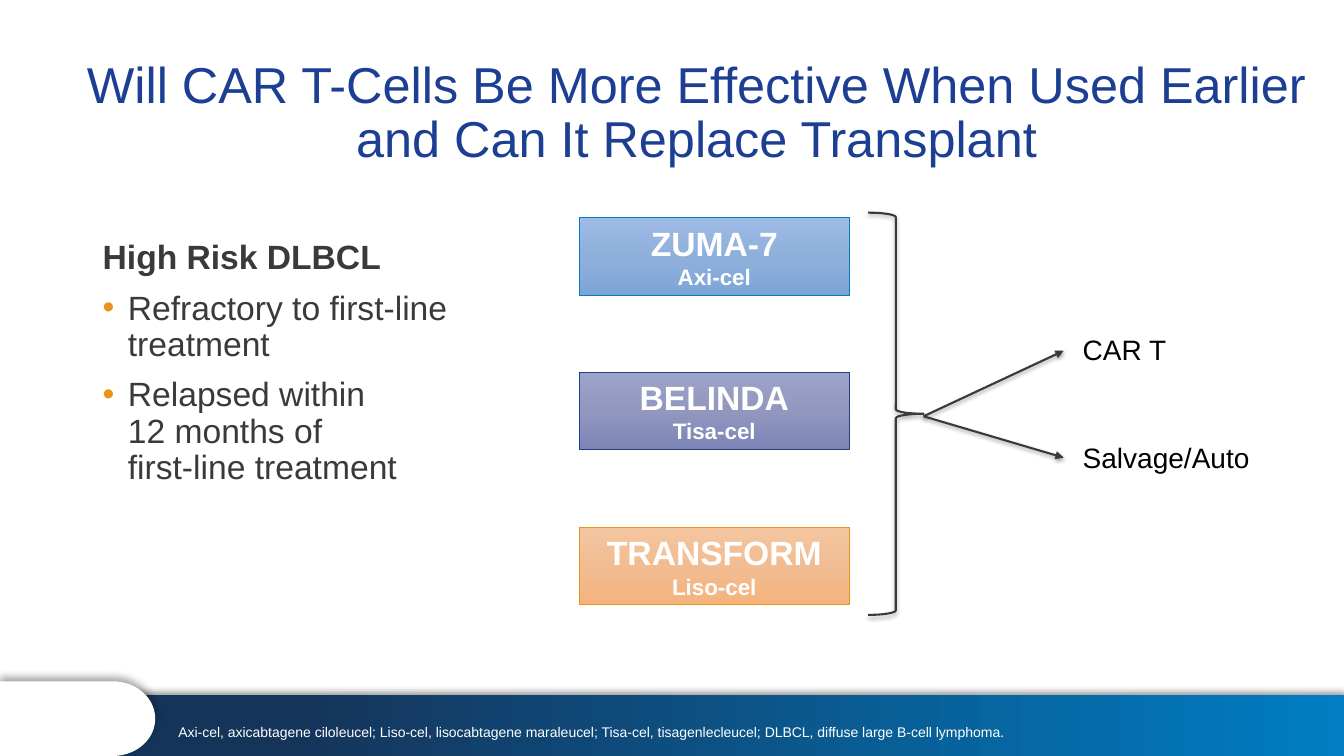
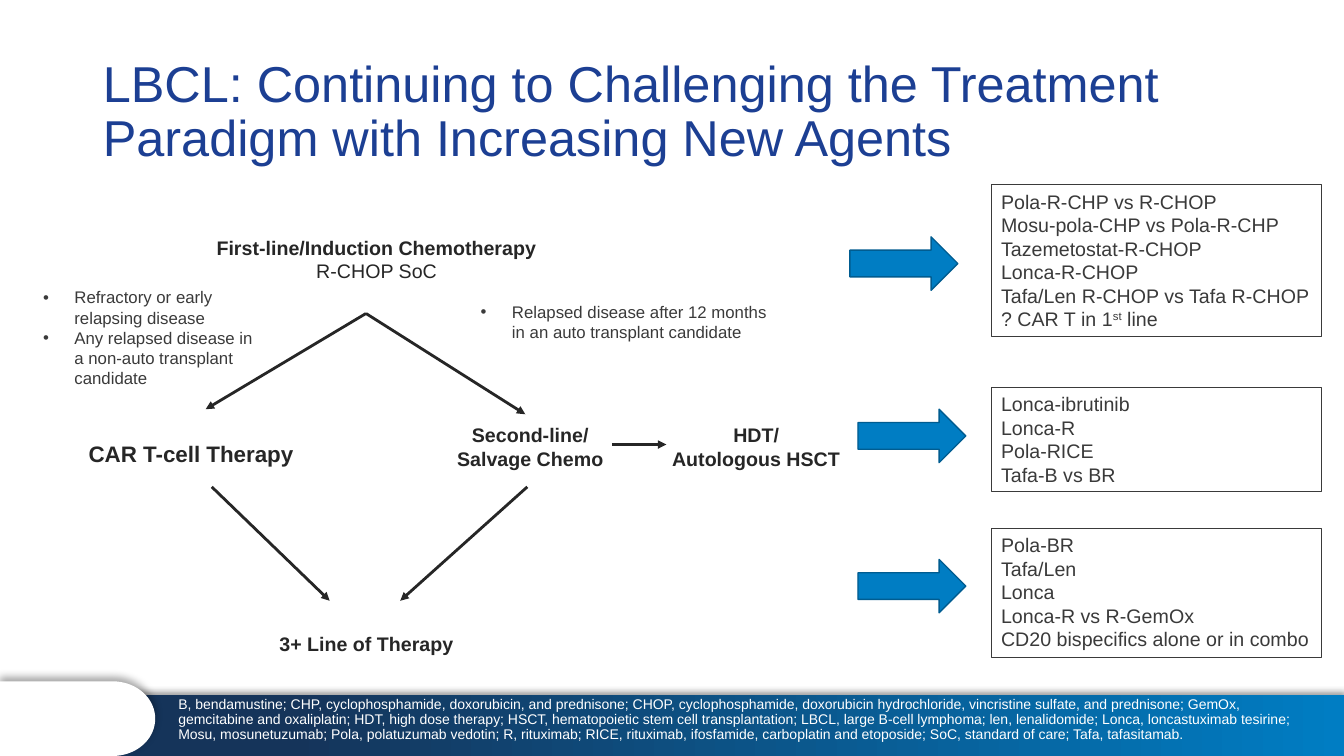
import dataclasses
import math

import lxml.etree
import pptx
import pptx.dml.color
import pptx.enum.dml
import pptx.enum.shapes
import pptx.enum.text
import pptx.oxml.ns
import pptx.util

SCALE = 9144
qn = pptx.oxml.ns.qn
KIND = pptx.enum.shapes.MSO_SHAPE
ALIGN = pptx.enum.text.PP_ALIGN
ANCHOR = pptx.enum.text.MSO_ANCHOR


@dataclasses.dataclass(frozen=True)
class Theme:
    font: str = "Arial"
    navy: str = "1C3F93"
    blue: str = "007DC3"
    edge: str = "005C90"
    deep: str = "15345A"
    gold: str = "E8931A"
    gray: str = "3A3A3A"
    dark: str = "262626"
    black: str = "000000"
    white: str = "FFFFFF"
    sky: tuple = ((0, "9DBBE5"), (50, "90B0DC"), (100, "7CA5D7"))
    plum: tuple = ((0, "9EA4C9"), (50, "9197BE"), (100, "7D85B7"))
    peach: tuple = ((0, "F4C6A0"), (50, "F1BC92"), (100, "F5B37D"))
    band: tuple = ((0, "007DC3"), (86, "15345A"))
    title: int = 36
    head: int = 24
    label: int = 20
    sub: int = 16
    node: int = 14
    note: int = 12
    foot: int = 10


T = Theme()


def px(size):
    return int(round(size * SCALE))


def area(*sizes):
    return [px(size) for size in sizes]


def rgb(code):
    return pptx.dml.color.RGBColor.from_string(code)


def add(node, tag, **attrs):
    return lxml.etree.SubElement(node, qn(tag), {k: str(v) for k, v in attrs.items()})


def bullet(para, hang, color):
    props = para._p.get_or_add_pPr()
    props.set("marL", str(px(hang)))
    props.set("indent", str(-px(hang)))
    add(add(props, "a:buClr"), "a:srgbClr", val=color)
    add(props, "a:buFont", typeface=T.font)
    add(props, "a:buChar", char="•")


def write(para, words, size, color, bold=False, base=0):
    for i, part in enumerate(words.split("\n")):
        if i:
            para.add_line_break()
        run = para.add_run()
        run.text = part
        run.font.name = T.font
        run.font.size = pptx.util.Pt(size)
        run.font.bold = bold
        run.font.color.rgb = rgb(color)
        if base:
            run._r.get_or_add_rPr().set("baseline", str(base * 1000))


def text(shape, lines, align=ALIGN.LEFT, anchor=ANCHOR.TOP, wrap=True,
         space=None, gap=0, hang=31, dot=T.gray, **style):
    frame = shape.text_frame
    frame.word_wrap = wrap
    frame.auto_size = pptx.enum.text.MSO_AUTO_SIZE.NONE
    frame.vertical_anchor = anchor
    for i, line in enumerate(lines):
        para = frame.add_paragraph() if i else frame.paragraphs[0]
        runs = [(line, {})] if isinstance(line, str) else line
        if runs[0][0].startswith("• "):
            bullet(para, hang, dot)
        para.alignment = align
        para.space_before = pptx.util.Pt(gap if i else 0)
        if space:
            para.line_spacing = space
        for words, extra in runs:
            write(para, words.removeprefix("• "), **{**style, **extra})


def label(slide, box, lines, **style):
    text(slide.shapes.add_textbox(*area(*box)), lines, **style)


def cast(item, fade, blur, dist, turn):
    glow = add(item._element.spPr.find(qn("a:effectLst")), "a:outerShdw",
               blurRad=pptx.util.Pt(blur), dist=pptx.util.Pt(dist),
               dir=turn * 60000, algn="ctr", rotWithShape=0)
    tint = add(glow, "a:srgbClr", val=T.black)
    add(tint, "a:alpha", val=fade * 1000)


def blend(shape, stops, angle):
    shape.fill.gradient()
    shape.fill.gradient_angle = angle
    ramp = shape._element.spPr.find(".//" + qn("a:gsLst"))
    for stop in list(ramp):
        ramp.remove(stop)
    for place, color in stops:
        add(add(ramp, "a:gs", pos=place * 1000), "a:srgbClr", val=color)


def paint(shape, fill=None, line=None, width=1, angle=270):
    shape.shadow.inherit = False
    if fill is None:
        shape.fill.background()
    elif isinstance(fill, str):
        shape.fill.solid()
        shape.fill.fore_color.rgb = rgb(fill)
    else:
        blend(shape, fill, angle)
    if line:
        shape.line.color.rgb = rgb(line)
        shape.line.width = pptx.util.Pt(width)
    else:
        shape.line.fill.background()
    return shape


def block(slide, kind, box, **style):
    return paint(slide.shapes.add_shape(kind, *area(*box)), **style)


def arrow(slide, start, end, color, width, shade=None):
    link = slide.shapes.add_connector(
        pptx.enum.shapes.MSO_CONNECTOR.STRAIGHT, *area(*start, *end))
    link.line.color.rgb = rgb(color)
    link.line.width = pptx.util.Pt(width)
    props = link._element.spPr
    add(props.find(qn("a:ln")), "a:tailEnd", type="triangle")
    add(props, "a:effectLst")
    if shade:
        cast(link, *shade)


def tab(slide):
    turns = [math.radians(deg) for deg in range(-90, 91, 5)]
    curve = [area(112 + 42 * math.cos(a), 713 + 37 * math.sin(a)) for a in turns]
    pen = slide.shapes.build_freeform(0, px(676), scale=1.0)
    pen.add_line_segments(curve + [area(0, 750)], close=True)
    cast(paint(pen.convert_to_shape(), fill=T.white), 34, 6.1, 3, 270)


def page(deck, title, box, align, foot, note):
    slide = deck.slides.add_slide(deck.slide_layouts[5])
    band = block(slide, KIND.RECTANGLE, (116, 690, 1217, 60), fill=T.band, angle=180)
    cast(band, 40, 4, 3, 270)
    tab(slide)
    head = slide.shapes.title
    head.left, head.top, head.width, head.height = area(*box)
    text(head, [title], align=align, anchor=ANCHOR.MIDDLE, space=0.9,
         size=T.title, color=T.navy)
    label(slide, foot, [note], anchor=ANCHOR.BOTTOM, space=0.9,
          size=T.foot, color=T.white)
    return slide


def trials(deck):
    slide = page(
        deck,
        "Will CAR T-Cells Be More Effective When Used Earlier and Can It Replace Transplant",
        (70, 41, 1242, 145), ALIGN.CENTER, (167, 691, 940, 49),
        "Axi-cel, axicabtagene ciloleucel; Liso-cel, lisocabtagene maraleucel; "
        "Tisa-cel, tisagenlecleucel; DLBCL, diffuse large B-cell lymphoma.")
    label(slide, (92, 234, 428, 399),
          [[("High Risk DLBCL", {"bold": True})],
           "• Refractory to first-line treatment",
           "• Relapsed within\n12 months of\nfirst-line treatment"],
          space=0.9, gap=10, hang=25, dot=T.gold, size=T.head, color=T.gray)
    arms = [("ZUMA-7", "Axi-cel", T.sky, T.blue),
            ("BELINDA", "Tisa-cel", T.plum, T.navy),
            ("TRANSFORM", "Liso-cel", T.peach, T.gold)]
    for i, (name, drug, fill, line) in enumerate(arms):
        card = block(slide, KIND.RECTANGLE, (575, 216 + 307 * i // 2, 267, 77),
                     fill=fill, line=line, width=0.5)
        text(card, [name, [(drug, {"size": T.sub})]], align=ALIGN.CENTER,
             anchor=ANCHOR.MIDDLE, size=T.head, color=T.white, bold=True)
    brace = block(slide, KIND.RIGHT_BRACE, (861, 211, 55, 399), line=T.gray, width=1.5)
    brace.adjustments[0] = 0.08
    brace.adjustments[1] = 0.5
    cast(brace, 35, 3.1, 1.8, 90)
    for name, top, wide, end in (("CAR T", 325, 126, 348), ("Salvage/Auto", 432, 234, 454)):
        label(slide, (1064, top, wide, 44), [name], size=T.label, color=T.black)
        arrow(slide, (916, 413), (1055, end), T.gray, 1.5, shade=(38, 3.1, 1.6, 90))


def agents(deck):
    slide = page(
        deck,
        "LBCL: Continuing to Challenging the Treatment Paradigm with Increasing New Agents",
        (92, 40, 1150, 145), ALIGN.LEFT, (167, 693, 1150, 49),
        "B, bendamustine; CHP, cyclophosphamide, doxorubicin, and prednisone; "
        "CHOP, cyclophosphamide, doxorubicin hydrochloride, vincristine sulfate, and prednisone; "
        "GemOx, gemcitabine and oxaliplatin; HDT, high dose therapy; "
        "HSCT, hematopoietic stem cell transplantation; LBCL, large B-cell lymphoma; "
        "len, lenalidomide; Lonca, loncastuximab tesirine; Mosu, mosunetuzumab; "
        "Pola, polatuzumab vedotin; R, rituximab; "
        "RICE, rituximab, ifosfamide, carboplatin and etoposide; "
        "SoC, standard of care; Tafa, tafasitamab.")
    lists = [
        (183, 151, (843, 235),
         ["Pola-R-CHP vs R-CHOP", "Mosu-pola-CHP vs Pola-R-CHP", "Tazemetostat-R-CHOP",
          "Lonca-R-CHOP", "Tafa/Len R-CHOP vs Tafa R-CHOP",
          [("? CAR T in 1", {}), ("st", {"base": 30}), (" line", {})]]),
        (384, 104, (851, 406), ["Lonca-ibrutinib", "Lonca-R", "Pola-RICE", "Tafa-B vs BR"]),
        (524, 128, (851, 555),
         ["Pola-BR", "Tafa/Len", "Lonca", "Lonca-R vs R-GemOx",
          "CD20 bispecifics alone or in combo"]),
    ]
    for top, high, spot, lines in lists:
        block(slide, KIND.RIGHT_ARROW, (*spot, 107, 53), fill=T.blue, line=T.edge)
        card = block(slide, KIND.RECTANGLE, (983, top, 328, high), line=T.gray, width=0.75)
        text(card, lines, size=T.node, color=T.gray)
    steps = [
        ((204, 229, 339, 81), T.node, False,
         ["First-line/Induction Chemotherapy", [("R-CHOP SoC", {"bold": False})]]),
        ((432, 415, 188, 57), T.node, True, ["Second-line/", "Salvage Chemo"]),
        ((656, 415, 188, 57), T.node, False, ["HDT/", "Autologous HSCT"]),
        ((236, 622, 255, 34), T.node, True, ["3+ Line of Therapy"]),
        ((62, 432, 255, 37), T.sub, True, ["CAR T-cell Therapy"]),
    ]
    for box, size, wrap, lines in steps:
        label(slide, box, lines, align=ALIGN.CENTER, wrap=wrap,
              size=size, color=T.dark, bold=True)
    links = [((363, 311), (204, 406)), ((363, 311), (521, 411)),
             ((210, 483), (327, 596)), ((523, 483), (397, 596)),
             ((607, 441), (661, 441))]
    for start, end in links:
        arrow(slide, start, end, T.dark, 2)
    notes = [
        ((33, 280, 241, 111),
         ["• Refractory or early relapsing disease",
          "• Any relapsed disease in a non-auto transplant candidate"]),
        ((467, 294, 306, 50),
         ["• Relapsed disease after 12 months in an auto transplant candidate"]),
    ]
    for box, lines in notes:
        label(slide, box, lines, size=T.note, color=T.gray)


def main():
    deck = pptx.Presentation()
    deck.slide_width, deck.slide_height = area(1333, 750)
    trials(deck)
    agents(deck)
    deck.save("out.pptx")


if __name__ == "__main__":
    main()
